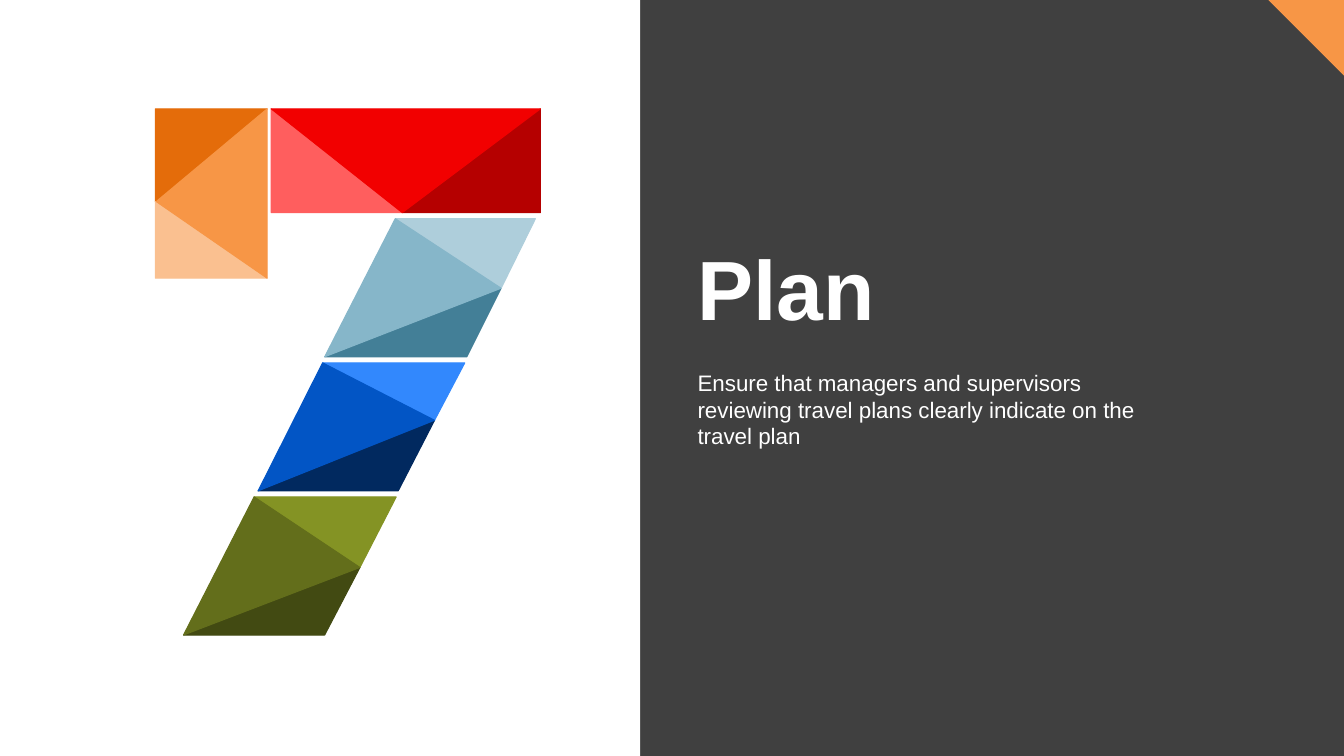
"""Build the "Plan" section slide with a faceted numeral seven."""
from pptx import Presentation
from pptx import util as u
from pptx.dml.color import RGBColor
from pptx.enum import shapes, text


def paint(sp, color, width=0):
    sp.shadow.inherit = False
    sp.fill.solid()
    sp.fill.fore_color.rgb = RGBColor.from_string(color)
    if width:
        sp.line.color.rgb = RGBColor.from_string(color)
        sp.line.width = u.Pt(width)
    else:
        sp.line.fill.background()


def polygon(parent, points, color, width=0):
    pts = [(u.Inches(x), u.Inches(y)) for x, y in points]
    fb = parent.build_freeform(*pts[0])
    fb.add_line_segments(pts[1:], close=True)
    paint(fb.convert_to_shape(), color, width)


prs = Presentation()
prs.slide_width, prs.slide_height = u.Inches(13.33), u.Inches(7.5)
s = prs.slides.add_slide(prs.slide_layouts[6])
s.background.fill.solid()
s.background.fill.fore_color.rgb = RGBColor.from_string("404040")

polygon(s.shapes, [(12.58, 0), (13.33, 0), (13.33, 0.75)], "F79646")
panel = s.shapes.add_shape(shapes.MSO_SHAPE.RECTANGLE, 0, 0, u.Inches(6.35), u.Inches(7.5))
paint(panel, "FFFFFF")

facets = [
    ("E46C0A", [(2.65, 1.08), (1.54, 1.08), (1.54, 2)]),
    ("FAC090", [(1.54, 2), (1.54, 2.76), (2.65, 2.76)]),
    ("F79646", [(2.65, 1.08), (2.65, 2.76), (1.55, 2)]),
    ("B50000", [(5.36, 1.08), (5.36, 2.11), (3.99, 2.11)]),
    ("FF5E5E", [(2.69, 1.08), (2.69, 2.11), (3.99, 2.11)]),
    ("F20000", [(2.69, 1.08), (5.36, 1.08), (3.99, 2.11)]),
]

stem = [
    ((3.92, 2.17), (5.31, 2.17), (4.97, 2.86), (4.63, 3.54), (3.22, 3.54),
     ("437F97", "AECEDB", "86B6C9")),
    ((3.2, 3.6), (4.61, 3.6), (4.31, 4.17), (3.95, 4.87), (2.56, 4.87),
     ("01295F", "3288FD", "0255C5")),
    ((2.52, 4.93), (3.93, 4.93), (3.57, 5.63), (3.22, 6.3), (1.82, 6.3),
     ("424A12", "849324", "636E1B")),
]
for top_left, top_right, middle, low_right, low_left, (dark, light, main) in stem:
    facets += [
        (dark, [low_left, low_right, middle]),
        (light, [top_left, top_right, middle]),
        (main, [top_left, low_left, middle]),
    ]

seven = s.shapes.add_group_shape()
for color, points in facets:
    polygon(seven.shapes, points, color, 0.75)

body = ("Ensure that managers and supervisors reviewing travel plans "
        "clearly indicate on the travel plan")
texts = [
    (body, 3.61, 4.8, 0.91, 16, False, text.MSO_ANCHOR.TOP, 1.0),
    ("Plan", 1.21, 5.83, 2.18, 60, True, text.MSO_ANCHOR.BOTTOM, 0.8),
]
for words, top, width, height, size, bold, anchor, spacing in texts:
    sp = s.shapes.add_textbox(u.Inches(6.82), u.Inches(top), u.Inches(width), u.Inches(height))
    tf = sp.text_frame
    tf.word_wrap = True
    tf.vertical_anchor = anchor
    p = tf.paragraphs[0]
    p.line_spacing = spacing
    r = p.add_run()
    r.text = words
    r.font.name, r.font.size, r.font.bold = "Arial", u.Pt(size), bold
    r.font.color.rgb = RGBColor.from_string("FFFFFF")

prs.save("out.pptx")
